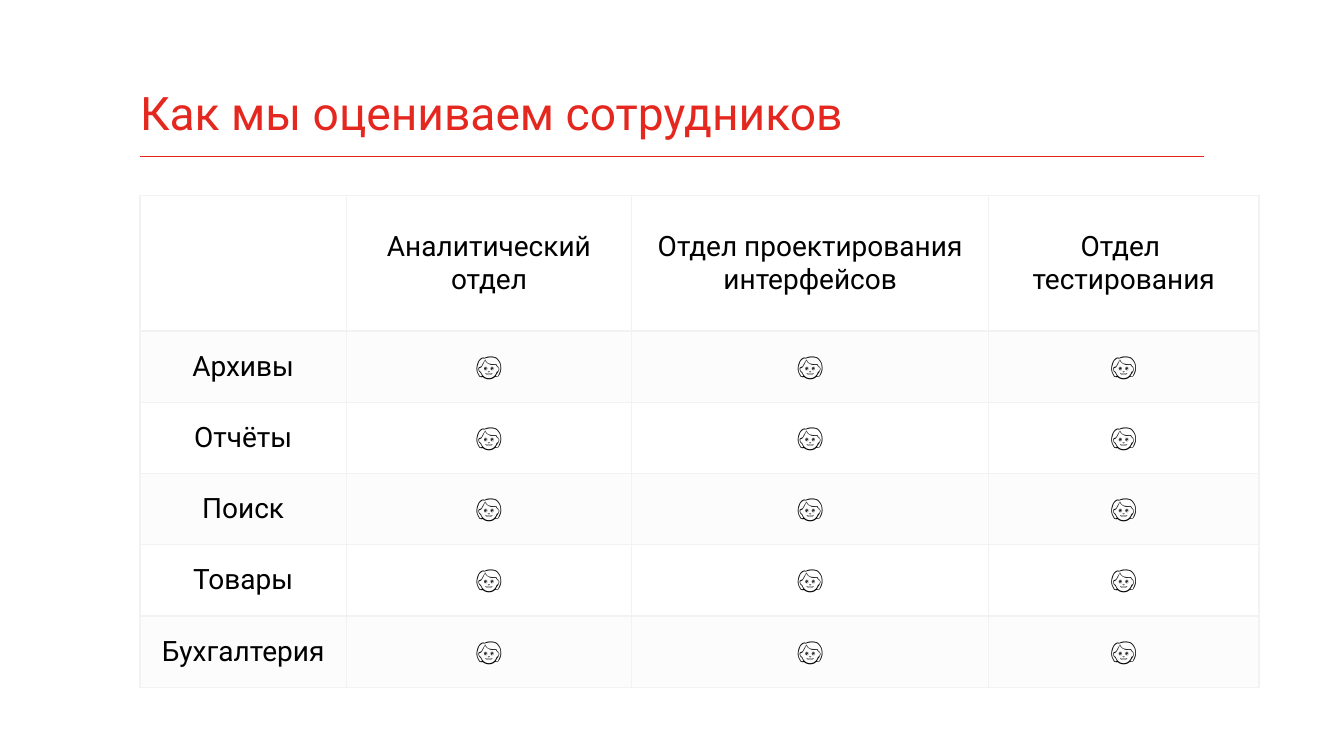
import lxml.etree
import pptx
import pptx.dml.color
import pptx.enum.shapes
import pptx.enum.text
import pptx.oxml.ns
import pptx.util
from dataclasses import dataclass

Pt = pptx.util.Pt
RGB = pptx.dml.color.RGBColor.from_string
ANCHOR = pptx.enum.text.MSO_ANCHOR
ALIGN = pptx.enum.text.PP_ALIGN
qn = pptx.oxml.ns.qn


@dataclass(frozen=True)
class Theme:
    font: str = "Roboto"
    title: str = "E5281F"
    rule: str = "E52319"
    text: str = "000000"
    grid: str = "F2F2F2"
    band_alpha: int = 20
    title_size: int = 33
    label_size: int = 20
    icon_size: int = 18


THEME = Theme()
LEFT, CONTENT_WIDTH = 100, 760

DEPARTMENTS = ["Аналитический отдел", "Отдел проектирования интерфейсов",
               "Отдел \vтестирования"]
PRODUCTS = ["Архивы", "Отчёты", "Поиск", "Товары", "Бухгалтерия"]
ICON = "👱"
COLUMN_WIDTHS = [147.4, 203.9, 255, 193]
HEADER_HEIGHT, ROW_HEIGHT = 97, 50.9


def format_runs(p, size, color):
    for r in p.runs:
        r.font.name = THEME.font
        r.font.size = Pt(size)
        r.font.bold = False
        r.font.color.rgb = RGB(color)


def set_title(s, text):
    sp = s.shapes.title
    sp.left, sp.top, sp.width, sp.height = Pt(LEFT), Pt(26), Pt(CONTENT_WIDTH), Pt(85)
    tf = sp.text_frame
    tf.text = text
    tf.word_wrap = True
    tf.auto_size = pptx.enum.text.MSO_AUTO_SIZE.NONE
    tf.vertical_anchor = ANCHOR.BOTTOM
    tf.margin_left = tf.margin_right = 0
    tf.margin_top, tf.margin_bottom = Pt(3.6), Pt(11.5)
    p = tf.paragraphs[0]
    p.alignment = ALIGN.LEFT
    format_runs(p, THEME.title_size, THEME.title)


def add_rule(s, y):
    line = s.shapes.add_connector(pptx.enum.shapes.MSO_CONNECTOR.STRAIGHT,
                                  Pt(LEFT), Pt(y), Pt(LEFT + CONTENT_WIDTH), Pt(y))
    line.line.color.rgb = RGB(THEME.rule)
    line.line.width = Pt(0.75)
    lxml.etree.SubElement(line._element.spPr, qn("a:effectLst"))


def set_borders(cell, widths):
    """Draw the left, right, top and bottom borders, in that order."""
    tcPr = cell._tc.get_or_add_tcPr()
    for i, (side, width) in enumerate(zip("LRTB", widths)):
        ln = lxml.etree.Element(qn(f"a:ln{side}"), w=str(int(Pt(width))))
        fill = lxml.etree.SubElement(ln, qn("a:solidFill"))
        lxml.etree.SubElement(fill, qn("a:srgbClr"), val=THEME.grid)
        tcPr.insert(i, ln)


def fill_cell(cell, banded):
    if not banded:
        cell.fill.background()
        return
    cell.fill.solid()
    cell.fill.fore_color.rgb = RGB(THEME.grid)
    color = cell._tc.tcPr.find(".//" + qn("a:srgbClr"))
    lxml.etree.SubElement(color, qn("a:alpha"), val=str(THEME.band_alpha * 1000))


def add_grid(s, rows, top):
    height = HEADER_HEIGHT + ROW_HEIGHT * (len(rows) - 1)
    table = s.shapes.add_table(len(rows), len(COLUMN_WIDTHS), Pt(LEFT), Pt(top),
                               Pt(sum(COLUMN_WIDTHS)), Pt(height)).table
    table.first_row = table.horz_banding = False
    for column, width in zip(table.columns, COLUMN_WIDTHS):
        column.width = Pt(width)
    for i, texts in enumerate(rows):
        table.rows[i].height = Pt(ROW_HEIGHT if i else HEADER_HEIGHT)
        for j, text in enumerate(texts):
            cell = table.cell(i, j)
            cell.vertical_anchor = ANCHOR.MIDDLE
            p = cell.text_frame.paragraphs[0]
            p.text = text
            p.alignment = ALIGN.CENTER
            format_runs(p, THEME.icon_size if text == ICON else THEME.label_size,
                        THEME.text)
            fill_cell(cell, banded=i % 2 == 1)
            # The line under the header is twice as thick
            set_borders(cell, (1, 1, 2 if i == 1 else 1, 2 if i == 0 else 1))


def main():
    prs = pptx.Presentation()
    prs.slide_width, prs.slide_height = Pt(960), Pt(540)
    s = prs.slides.add_slide(prs.slide_layouts[5])

    # Heading
    set_title(s, "Как мы оцениваем сотрудников")
    add_rule(s, 111.75)

    # Products by department
    rows = [["", *DEPARTMENTS]]
    rows += [[product] + [ICON] * len(DEPARTMENTS) for product in PRODUCTS]
    add_grid(s, rows, 139.5)

    prs.save("out.pptx")


if __name__ == "__main__":
    main()
